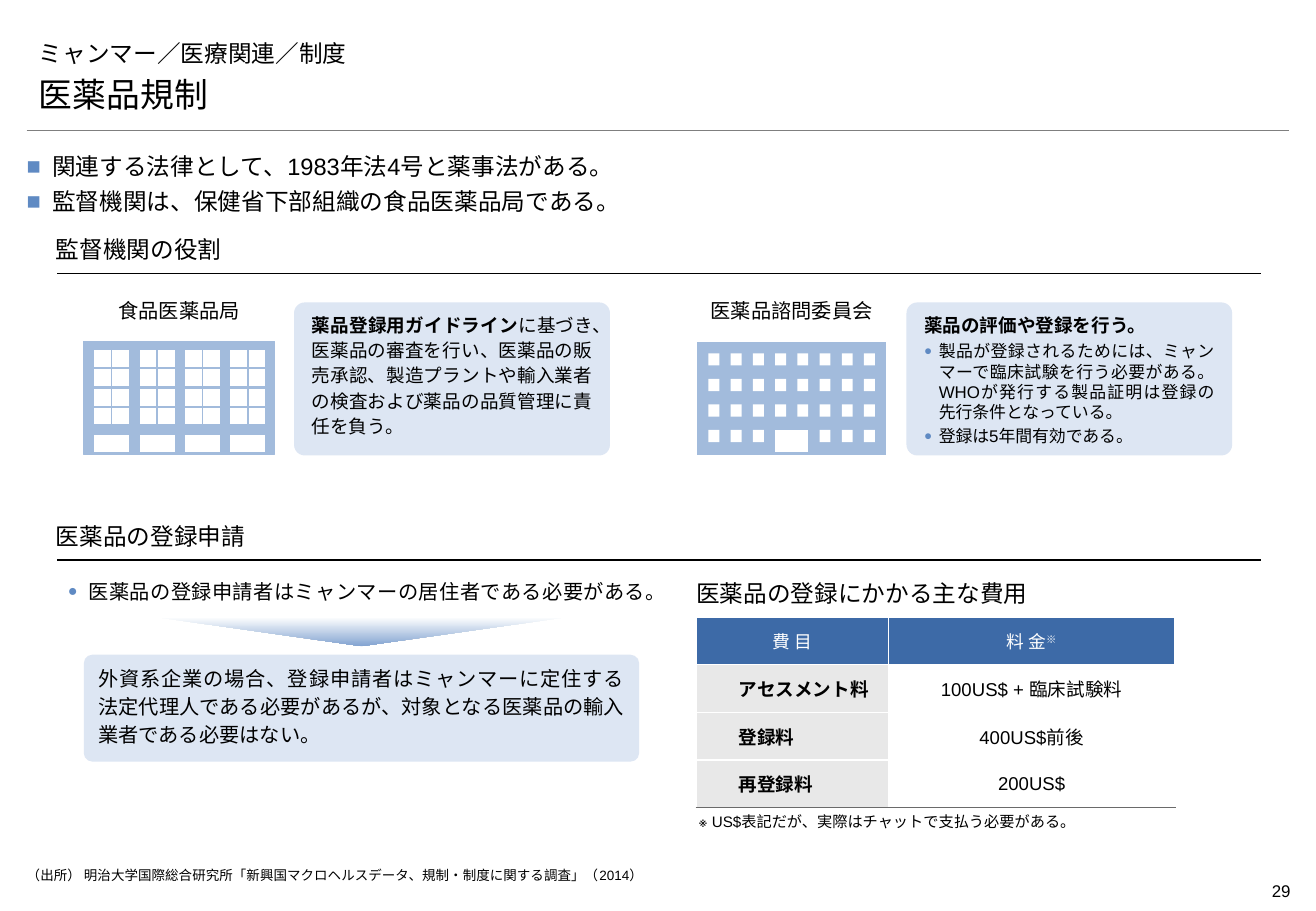
from lxml.etree import SubElement
from pptx import Presentation
from pptx.dml.color import RGBColor
from pptx.enum.shapes import MSO_CONNECTOR, MSO_SHAPE
from pptx.enum.text import MSO_ANCHOR, MSO_AUTO_SIZE, PP_ALIGN
from pptx.oxml.ns import qn
from pptx.util import Inches, Pt

BLACK, WHITE, GRAY = "000000", "FFFFFF", "6A6A6A"
WALL, PANEL, BULLET = "A2BBDC", "DDE6F3", "5F8AC3"
CJK, HEADING_FONT = "Noto Sans CJK JP", "Montserrat"
LEFT, CENTER, RIGHT, JUSTIFY = PP_ALIGN.LEFT, PP_ALIGN.CENTER, PP_ALIGN.RIGHT, PP_ALIGN.JUSTIFY
NO_INSETS = (0, 0, 0, 0)
HEADING_INSETS = (0, 0.05, 0, 0.08)
PANEL_INSETS = (0.12, 0.04, 0.12, 0.05)
PANEL_TEXT = dict(size=11, align=JUSTIFY, line=1.14, after=3)


def color(value):
    return RGBColor.from_string(value)


def box(*lengths):
    return [Inches(length) for length in lengths]


# Text
def write(frame, text, size=12, font="Arial", fill=BLACK, bold=False, align=LEFT,
          line=1.0, after=0, bullet=None, bullet_size=100, indent=0):
    """Add a paragraph; text is a string or a list of (text, bold, baseline)."""
    paragraph = frame.paragraphs[0]
    if paragraph.runs:
        paragraph = frame.add_paragraph()
    properties = paragraph._p.get_or_add_pPr()
    properties.set("marL", str(Inches(indent)))
    properties.set("indent", str(-Inches(indent)))
    if bullet:
        bullet_color = SubElement(properties, qn("a:buClr"))
        SubElement(bullet_color, qn("a:srgbClr"), val=BULLET)
        SubElement(properties, qn("a:buSzPct"), val=str(bullet_size * 1000))
        SubElement(properties, qn("a:buFont"), typeface="Arial")
        SubElement(properties, qn("a:buChar"), char=bullet)
    else:
        SubElement(properties, qn("a:buNone"))
    paragraph.alignment = align
    paragraph.line_spacing = line
    paragraph.space_before, paragraph.space_after = Pt(0), Pt(after)
    for content, is_bold, baseline in [(text, bold, 0)] if isinstance(text, str) else text:
        run = paragraph.add_run()
        run.text = content
        run.font.size, run.font.bold, run.font.name = Pt(size), is_bold, font
        run.font.color.rgb = color(fill)
        run_properties = run._r.get_or_add_rPr()
        SubElement(run_properties, qn("a:ea"), typeface=CJK)
        if baseline:
            run_properties.set("baseline", str(baseline * 1000))


def set_frame(shape, insets=(0.1, 0.05, 0.1, 0.05), anchor=MSO_ANCHOR.TOP):
    frame = shape.text_frame
    frame.word_wrap, frame.auto_size = True, MSO_AUTO_SIZE.NONE
    frame.vertical_anchor = anchor
    (frame.margin_left, frame.margin_top,
     frame.margin_right, frame.margin_bottom) = box(*insets)
    return frame


def add_text(slide, place, text, insets=(0.1, 0.05, 0.1, 0.05),
             anchor=MSO_ANCHOR.TOP, **text_format):
    shape = slide.shapes.add_textbox(*box(*place))
    write(set_frame(shape, insets, anchor), text, **text_format)


def fill_placeholder(shape, place, **frame_format):
    shape.left, shape.top, shape.width, shape.height = box(*place)
    return set_frame(shape, **frame_format)


# Shapes
def add_filled(shapes, kind, place, fill, outline=None, width=0.75):
    shape = shapes.add_shape(kind, *box(*place))
    shape.shadow.inherit = False
    shape.fill.solid()
    shape.fill.fore_color.rgb = color(fill)
    if outline:
        shape.line.color.rgb, shape.line.width = color(outline), Pt(width)
    else:
        shape.line.fill.background()
    return shape


def add_rule(slide, left, right, y, stroke, width):
    rule = slide.shapes.add_connector(MSO_CONNECTOR.STRAIGHT, *box(left, y, right, y))
    rule.line.color.rgb, rule.line.width = color(stroke), Pt(width)
    SubElement(rule._element.spPr, qn("a:effectLst"))


def add_section(slide, title, top):
    add_rule(slide, 0.47, 10.38, top + 0.31, BLACK, 0.75)
    add_text(slide, (0.46, top, 9.92, 0.31), title, HEADING_INSETS, MSO_ANCHOR.BOTTOM,
             size=14, font=HEADING_FONT)


def add_panel(slide, place, corner, insets):
    shape = add_filled(slide.shapes, MSO_SHAPE.ROUNDED_RECTANGLE, place, PANEL)
    shape.adjustments[0] = corner
    return set_frame(shape, insets)


def add_agency_building(slide):
    shapes, kind = slide.shapes.add_group_shape().shapes, MSO_SHAPE.RECTANGLE
    add_filled(shapes, kind, (0.69, 2.81, 1.57, 0.93), WALL, WALL)
    for bay in range(4):
        left = 0.77 + bay * 1.12 / 3
        for top in (2.88, 3.03, 3.2, 3.35):
            for x in (left, left + 0.15):
                add_filled(shapes, kind, (x, top, 0.15, 0.15), WHITE, WALL)
        add_filled(shapes, kind, (left, 3.58, 0.3, 0.15), WHITE, WALL)


def add_committee_building(slide):
    shapes, kind = slide.shapes.add_group_shape().shapes, MSO_SHAPE.RECTANGLE
    add_filled(shapes, kind, (5.73, 2.81, 1.57, 0.94), WALL, WHITE, 1)
    add_filled(shapes, kind, (6.38, 3.54, 0.27, 0.18), WHITE)
    for row in range(4):
        for column in range(8):
            if row < 3 or column not in (3, 4):
                place = (5.83 + column * 1.28 / 7, 2.91 + row * 0.21, 0.09, 0.1)
                add_filled(shapes, kind, place, WHITE)


def add_down_arrow(slide):
    arrow = add_filled(slide.shapes, MSO_SHAPE.FLOWCHART_MERGE, (1.28, 5.08, 3.39, 0.24), WHITE)
    arrow.fill.gradient()
    arrow.fill.gradient_angle = 270
    for stop, value in zip(arrow.fill.gradient_stops, (WHITE, "83A4D1")):
        stop.color.rgb = color(value)


# Table
def set_border(cell, side, stroke):
    border = SubElement(cell._tc.get_or_add_tcPr(), qn(f"a:{side}"), w=str(Pt(0.5)))
    SubElement(SubElement(border, qn("a:solidFill")), qn("a:srgbClr"), val=stroke)


def add_fee_table(slide):
    rows = [("費 目", [("料 金", False, 0), ("※", False, 30)]),
            ("アセスメント料", "100US$ + 臨床試験料"),
            ("登録料", "400US$前後"),
            ("再登録料", "200US$")]
    table = slide.shapes.add_table(4, 2, *box(5.73, 5.08, 3.94, 1.57)).table
    table.first_row = table.horz_banding = False
    table.columns[0].width, table.columns[1].width = box(1.58, 2.36)
    for row, values in enumerate(rows):
        for column, text in enumerate(values):
            cell = table.cell(row, column)
            header, label = row == 0, row > 0 and column == 0
            cell.margin_left = Inches(0.35 if label else 0)
            cell.margin_top = cell.margin_right = cell.margin_bottom = 0
            cell.vertical_anchor = MSO_ANCHOR.MIDDLE
            if header:
                set_border(cell, "lnL" if column else "lnR", WHITE)
            else:
                set_border(cell, "lnB", GRAY)
            if header or label:
                cell.fill.solid()
                cell.fill.fore_color.rgb = color("3D6AA7" if header else "E8E8E8")
            else:
                cell.fill.background()
            write(cell.text_frame, text, size=10.5 if header else 11,
                  font=CJK if header else "Arial", fill=WHITE if header else BLACK,
                  bold=label, align=LEFT if label else CENTER)


def main():
    presentation = Presentation()
    presentation.slide_width, presentation.slide_height = box(10.83, 7.5)
    slide = presentation.slides.add_slide(presentation.slide_layouts[3])
    title, subject, summary = slide.placeholders

    # Header and summary list
    add_rule(slide, 0.22, 10.61, 1.07, "7F7F7F", 0.25)
    for shape, top, text, size in ((title, 0.21, "ミャンマー／医療関連／制度", 14),
                                   (subject, 0.6, "医薬品規制", 20)):
        frame = fill_placeholder(shape, (0.22, top, 10.39, 0.39), anchor=MSO_ANCHOR.BOTTOM)
        write(frame, text, size=size, font=HEADING_FONT)
    frame = fill_placeholder(summary, (0.22, 1.23, 10.39, 0.55), insets=NO_INSETS)
    for text in ("関連する法律として、1983年法4号と薬事法がある。",
                 "監督機関は、保健省下部組織の食品医薬品局である。"):
        write(frame, text, size=14, align=JUSTIFY, line=1.1, after=2, bullet="■", indent=0.21)

    # Roles of the authorities
    add_section(slide, "監督機関の役割", 1.94)
    for left, name in ((0.69, "食品医薬品局"), (5.73, "医薬品諮問委員会")):
        add_text(slide, (left, 2.41, 1.57, 0.3), name, font=CJK, align=CENTER)
    add_agency_building(slide)
    add_committee_building(slide)
    frame = add_panel(slide, (2.42, 2.49, 2.6, 1.26), 0.07, PANEL_INSETS)
    write(frame, [("薬品登録用ガイドライン", True, 0),
                  ("に基づき、医薬品の審査を行い、医薬品の販売承認、製造プラントや輸入業者の検査"
                   "および薬品の品質管理に責任を負う。", False, 0)], **PANEL_TEXT)
    frame = add_panel(slide, (7.46, 2.49, 2.68, 1.26), 0.07, PANEL_INSETS)
    write(frame, "薬品の評価や登録を行う。", bold=True, **PANEL_TEXT)
    for text in ("製品が登録されるためには、ミャンマーで臨床試験を行う必要がある。"
                 "WHOが発行する製品証明は登録の先行条件となっている。",
                 "登録は5年間有効である。"):
        write(frame, text, size=10, align=JUSTIFY, after=2, bullet="●", bullet_size=80, indent=0.12)

    # Registration application
    add_section(slide, "医薬品の登録申請", 4.3)
    add_text(slide, (0.46, 4.69, 4.96, 0.33), "医薬品の登録申請者はミャンマーの居住者である必要がある。",
             align=JUSTIFY, line=1.14, after=3, bullet="●", bullet_size=80, indent=0.17)
    add_down_arrow(slide)
    frame = add_panel(slide, (0.69, 5.39, 4.57, 0.88), 0.08, (0.1, 0.05, 0.1, 0.05))
    write(frame, "外資系企業の場合、登録申請者はミャンマーに定住する法定代理人である必要があるが、"
          "対象となる医薬品の輸入業者である必要はない。", align=JUSTIFY, line=1.14, after=3)

    # Fees
    add_text(slide, (5.73, 4.69, 3.94, 0.39), "医薬品の登録にかかる主な費用", HEADING_INSETS,
             MSO_ANCHOR.BOTTOM, size=14, font=HEADING_FONT)
    add_fee_table(slide)
    add_text(slide, (5.75, 6.65, 3.92, 0.17), "※ US$表記だが、実際はチャットで支払う必要がある。",
             (0, 0.04, 0, 0), size=9)

    # Source and page number
    add_text(slide, (0.22, 7.14, 9.92, 0.16),
             "（出所） 明治大学国際総合研究所「新興国マクロヘルスデータ、規制・制度に関する調査」（2014）",
             NO_INSETS, size=8, indent=0.36)
    add_text(slide, (9.83, 7.2, 0.79, 0.27), "29", (0, 0.05, 0, 0.05), size=10, align=RIGHT)
    presentation.save("out.pptx")


if __name__ == "__main__":
    main()
